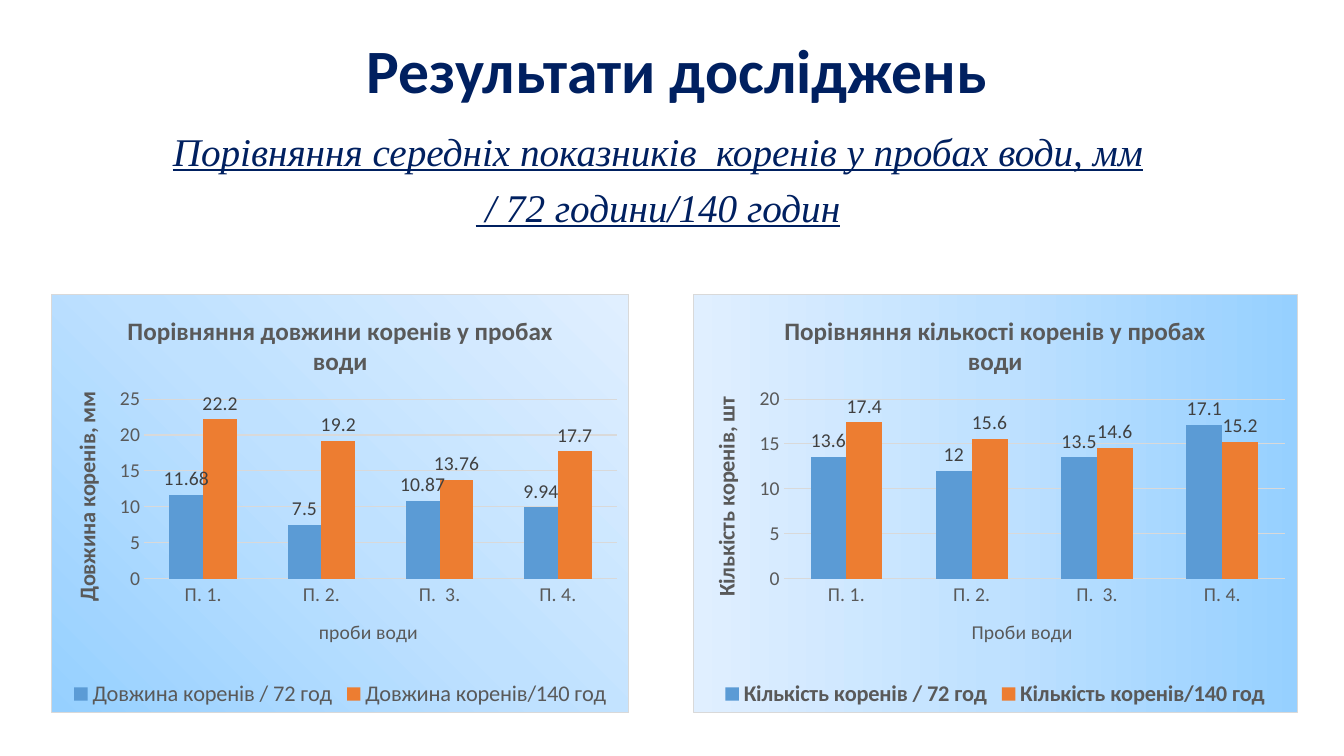
"""Build a slide comparing root length and root count across water samples."""
from lxml import etree
from pptx import Presentation
from pptx.chart.data import CategoryChartData
from pptx.dml.color import RGBColor
from pptx.enum.chart import XL_CHART_TYPE, XL_LABEL_POSITION, XL_LEGEND_POSITION, XL_TICK_MARK
from pptx.enum.text import MSO_ANCHOR, PP_ALIGN
from pptx.oxml.ns import qn
from pptx.util import Inches, Pt

COLUMNS = XL_CHART_TYPE.COLUMN_CLUSTERED
OUTSIDE_END = XL_LABEL_POSITION.OUTSIDE_END
BOTTOM = XL_LEGEND_POSITION.BOTTOM
NO_TICK = XL_TICK_MARK.NONE
CENTER = PP_ALIGN.CENTER
MIDDLE, TOP = MSO_ANCHOR.MIDDLE, MSO_ANCHOR.TOP

COLORS = {"navy": "002060", "gray": "595959", "label": "404040", "grid": "D9D9D9",
          "hours_72": "5B9BD5", "hours_140": "ED7D31"}
GRADIENT = {0: "96D0FF", 50: "BFE1FF", 100: "E0EFFF"}

TITLE = ["Результати досліджень"]
SUBTITLE = ["Порівняння середніх показників  коренів у пробах води, мм",
            " / 72 години/140 годин"]
SAMPLES = ["П. 1.", "П. 2.", "П.  3.", "П. 4."]
CHARTS = [
    {"title": "Порівняння довжини коренів у пробах води",
     "samples_title": "проби води", "values_title": "Довжина коренів, мм",
     "series": {"Довжина коренів / 72 год": (11.68, 7.5, 10.87, 9.94),
                "Довжина коренів/140 год": (22.2, 19.2, 13.76, 17.7)},
     "left": 0.51, "width": 5.73, "maximum": 25, "angle": 315, "bold_legend": False,
     "plot": {"x": 0.16, "y": 0.25, "w": 0.82, "h": 0.43}},
    {"title": "Порівняння кількості коренів у пробах води",
     "samples_title": "Проби води", "values_title": "Кількість коренів, шт",
     "series": {"Кількість коренів / 72 год": (13.6, 12, 13.5, 17.1),
                "Кількість коренів/140 год": (17.4, 15.6, 14.6, 15.2)},
     "left": 6.87, "width": 6, "maximum": 20, "angle": 180, "bold_legend": True,
     "plot": {"x": 0.15, "y": 0.25, "w": 0.83, "h": 0.43}},
]
CHART_TOP, CHART_HEIGHT = 2.92, 4.15


def color(name):
    return RGBColor.from_string(COLORS[name])


def style(font, size, color_name, bold=False, name="Calibri"):
    font.size, font.bold, font.name = Pt(size), bold, name
    font.color.rgb = color(color_name)


def add_text(slide, box, lines, anchor, size, spacing, after=0, name="Calibri", heading=False):
    frame = slide.shapes.add_textbox(*map(Inches, box)).text_frame
    frame.word_wrap, frame.vertical_anchor = True, anchor
    for index, line in enumerate(lines):
        paragraph = frame.paragraphs[0] if index == 0 else frame.add_paragraph()
        paragraph.text, paragraph.alignment = line, CENTER
        paragraph.line_spacing, paragraph.space_after = spacing, Pt(after)
        style(paragraph.font, size, "navy", heading, name)
        paragraph.font.italic = paragraph.font.underline = not heading


def set_title(owner, text, size, bold):
    paragraph = owner.text_frame.paragraphs[0]
    paragraph.text = text
    style(paragraph.font, size, "gray", bold)


def set_background(chart, angle):
    root = chart.element.find(qn("c:chart"))
    properties = etree.Element(qn("c:spPr"))
    gradient = etree.SubElement(properties, qn("a:gradFill"))
    stops = etree.SubElement(gradient, qn("a:gsLst"))
    for position, shade in GRADIENT.items():
        stop = etree.SubElement(stops, qn("a:gs"), pos=str(position * 1000))
        etree.SubElement(stop, qn("a:srgbClr"), val=shade)
    etree.SubElement(gradient, qn("a:lin"), ang=str(angle * 60000), scaled="1")
    border = etree.SubElement(properties, qn("a:ln"), w=str(Pt(0.75)))
    fill = etree.SubElement(border, qn("a:solidFill"))
    etree.SubElement(fill, qn("a:srgbClr"), val=COLORS["grid"])
    root.addnext(properties)


def place_plot(chart, shares):
    plot_area = chart.element.find(qn("c:chart")).find(qn("c:plotArea"))
    for old_layout in plot_area.findall(qn("c:layout")):
        plot_area.remove(old_layout)
    layout = etree.Element(qn("c:layout"))
    manual = etree.SubElement(layout, qn("c:manualLayout"))
    settings = {"layoutTarget": "inner", "xMode": "edge", "yMode": "edge", **shares}
    for tag, value in settings.items():
        etree.SubElement(manual, qn(f"c:{tag}"), val=str(value))
    plot_area.insert(0, layout)


def add_column_chart(slide, content):
    data = CategoryChartData()
    data.categories = SAMPLES
    for name, values in content["series"].items():
        data.add_series(name, values)
    box = (content["left"], CHART_TOP, content["width"], CHART_HEIGHT)
    chart = slide.shapes.add_chart(COLUMNS, *map(Inches, box), data).chart
    set_background(chart, content["angle"])
    chart.font.size, chart.font.name = Pt(10), "Calibri"
    chart.has_title = True
    set_title(chart.chart_title, content["title"], 18, True)

    samples, values = chart.category_axis, chart.value_axis
    set_title(samples.axis_title, content["samples_title"], 14, False)
    set_title(values.axis_title, content["values_title"], 16, True)
    for axis in (samples, values):
        axis.major_tick_mark = axis.minor_tick_mark = NO_TICK
        axis.format.line.fill.background()
        style(axis.tick_labels.font, 14, "gray")
    values.minimum_scale, values.maximum_scale, values.major_unit = 0, content["maximum"], 5
    values.has_major_gridlines = True
    grid = values.major_gridlines.format.line
    grid.width, grid.color.rgb = Pt(0.75), color("grid")

    chart.has_legend = True
    chart.legend.position, chart.legend.include_in_layout = BOTTOM, False
    style(chart.legend.font, 16, "gray", content["bold_legend"])

    plot = chart.plots[0]
    plot.gap_width, plot.overlap, plot.vary_by_categories = 150, 0, False
    for series, color_name in zip(plot.series, ("hours_72", "hours_140")):
        series.format.fill.solid()
        series.format.fill.fore_color.rgb = color(color_name)
        labels = series.data_labels
        labels.show_value, labels.position = True, OUTSIDE_END
        style(labels.font, 14, "label")
    place_plot(chart, content["plot"])


def main():
    presentation = Presentation()
    presentation.slide_width, presentation.slide_height = Inches(13.33), Inches(7.5)
    slide = presentation.slides.add_slide(presentation.slide_layouts[6])
    add_text(slide, (3.22, 0, 6.99, 1.45), TITLE, MIDDLE, 44, 0.9, heading=True)
    add_text(slide, (1.42, 1.26, 10.21, 1.08), SUBTITLE, TOP, 28, Pt(30), 10, "Times New Roman")
    for content in CHARTS:
        add_column_chart(slide, content)
    presentation.save("out.pptx")


if __name__ == "__main__":
    main()
